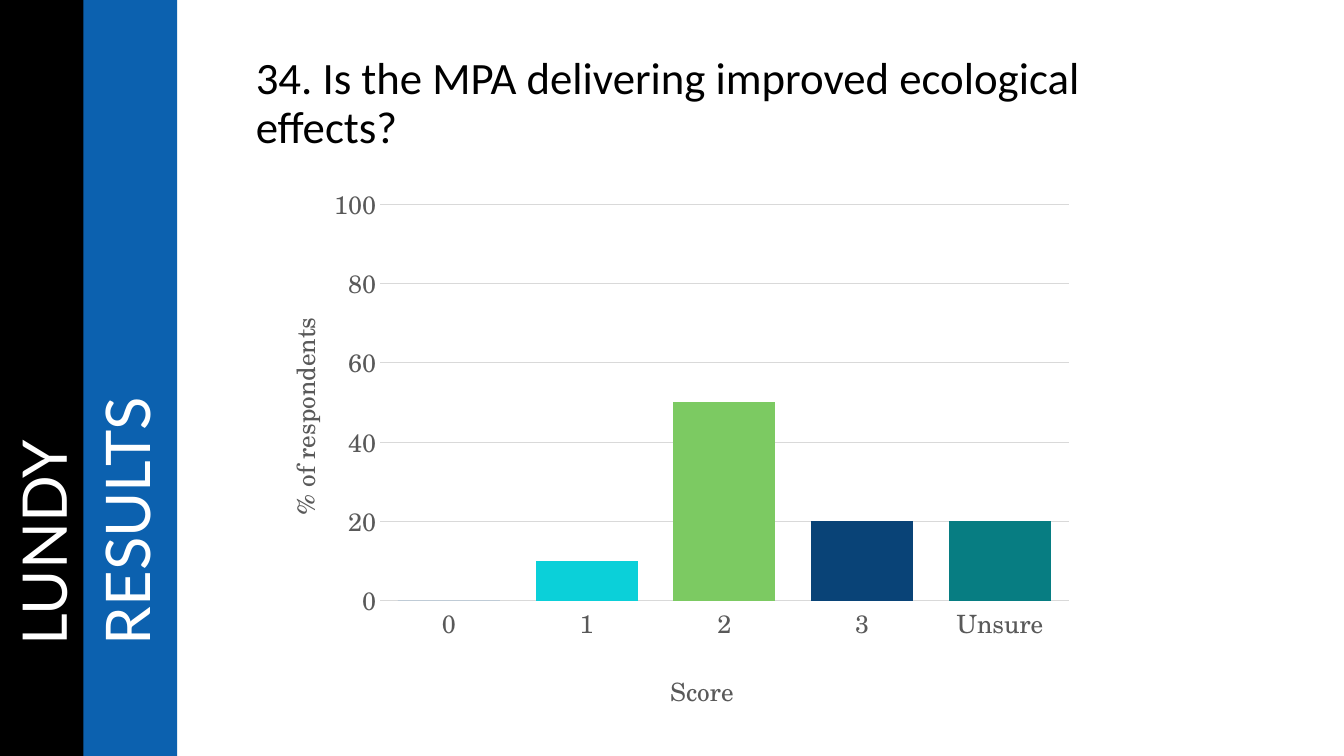
import pptx
import pptx.chart.data
import pptx.dml.color
import pptx.enum.chart
import pptx.enum.shapes
import pptx.enum.text
import pptx.oxml
import pptx.oxml.ns
import pptx.util

Pt = pptx.util.Pt
CHART_FONT = "TeX Gyre Schola"
RESPONSES = {
    "0": (0, "0F6FC6"),
    "1": (10, "0BD0D9"),
    "2": (50, "7CCA62"),
    "3": (20, "094377"),
    "Unsure": (20, "077D82"),
}


def rgb(value):
    """Turn a hex string into a colour."""
    return pptx.dml.color.RGBColor.from_string(value)


def style_font(font, name, size, color):
    """Set the face, size and colour of a font."""
    font.name = name
    font.size = Pt(size)
    font.bold = False
    font.color.rgb = rgb(color)


def write_line(frame, wording, name, size, color):
    """Write one left-aligned, vertically centred paragraph."""
    frame.text = wording
    frame.word_wrap = True
    frame.auto_size = pptx.enum.text.MSO_AUTO_SIZE.NONE
    frame.vertical_anchor = pptx.enum.text.MSO_ANCHOR.MIDDLE
    paragraph = frame.paragraphs[0]
    paragraph.alignment = pptx.enum.text.PP_ALIGN.LEFT
    paragraph.line_spacing = 0.9
    style_font(paragraph.runs[0].font, name, size, color)


def add_question(slide, wording):
    """Place the question in the title placeholder."""
    question = slide.shapes.title
    question.left, question.top = Pt(175.5), Pt(22.5)
    question.width, question.height = Pt(699), Pt(104.5)
    write_line(question.text_frame, wording, "Calibri", 32, "000000")


def add_side_band(slide, wording, edge, color):
    """Add a full-height band at the given left edge, reading upwards."""
    length, thickness = 540, 67
    band = slide.shapes.add_shape(
        pptx.enum.shapes.MSO_SHAPE.RECTANGLE,
        Pt(edge + (thickness - length) / 2), Pt((length - thickness) / 2),
        Pt(length), Pt(thickness))
    band.rotation = 270
    band.shadow.inherit = False
    band.fill.solid()
    band.fill.fore_color.rgb = rgb(color)
    band.line.fill.background()
    band.text_frame.margin_left = Pt(79.2)
    write_line(band.text_frame, wording, "Lato", 44, "FFFFFF")


def set_layout(element, index, **fractions):
    """Fix the place of a chart part as fractions of the chart."""
    for old in element.findall(pptx.oxml.ns.qn("c:layout")):
        element.remove(old)
    target = '<c:layoutTarget val="inner"/>' if "w" in fractions else ""
    modes = "".join(f'<c:{key}Mode val="edge"/>' for key in "xy")
    values = "".join(f'<c:{key} val="{value}"/>' for key, value in fractions.items())
    element.insert(index, pptx.oxml.parse_xml(
        f'<c:layout {pptx.oxml.ns.nsdecls("c")}><c:manualLayout>'
        f"{target}{modes}{values}</c:manualLayout></c:layout>"))


def style_axis(axis, caption, x, y):
    """Format an axis and place its caption."""
    axis.major_tick_mark = pptx.enum.chart.XL_TICK_MARK.NONE
    axis.minor_tick_mark = pptx.enum.chart.XL_TICK_MARK.NONE
    style_font(axis.tick_labels.font, CHART_FONT, 18, "595959")
    frame = axis.axis_title.text_frame
    frame.text = caption
    style_font(frame.paragraphs[0].runs[0].font, CHART_FONT, 18, "595959")
    set_layout(axis.axis_title._element, 1, x=x, y=y)


def style_line(line):
    """Make a thin grey chart line."""
    line.color.rgb = rgb("D9D9D9")
    line.width = Pt(0.75)


def add_score_chart(slide):
    """Add the column chart of respondents by score."""
    scores = pptx.chart.data.CategoryChartData()
    scores.categories = list(RESPONSES)
    scores.add_series("Series 1", [share for share, color in RESPONSES.values()])
    chart = slide.shapes.add_chart(
        pptx.enum.chart.XL_CHART_TYPE.COLUMN_CLUSTERED,
        Pt(175.5), Pt(126.5), Pt(600), Pt(388), scores).chart
    chart.has_title = False
    chart.has_legend = False
    style_font(chart.font, CHART_FONT, 18, "000000")

    style_axis(chart.category_axis, "Score", 0.5, 0.9)
    style_line(chart.category_axis.format.line)

    share_axis = chart.value_axis
    style_axis(share_axis, "% of respondents", 0.04, 0.25)
    share_axis.minimum_scale, share_axis.maximum_scale = 0, 100
    share_axis.major_unit = 20
    share_axis.tick_labels.number_format = "General"
    share_axis.tick_labels.number_format_is_linked = False
    share_axis.format.line.fill.background()
    style_line(share_axis.major_gridlines.format.line)
    direction = share_axis.axis_title._element.find(".//" + pptx.oxml.ns.qn("a:bodyPr"))
    direction.set("rot", "-5400000")
    direction.set("vert", "horz")

    columns = chart.plots[0]
    columns.gap_width = 35
    columns.overlap = -2
    columns.vary_by_categories = False
    for index, (share, color) in enumerate(RESPONSES.values()):
        fill = columns.series[0].points[index].format.fill
        fill.solid()
        fill.fore_color.rgb = rgb(color)
    set_layout(chart._chartSpace.chart.plotArea, 0, x=0.16, y=0.05, w=0.82, h=0.73)


def main():
    """Build and save the slide."""
    presentation = pptx.Presentation()
    presentation.slide_width, presentation.slide_height = Pt(960), Pt(540)
    slide = presentation.slides.add_slide(presentation.slide_layouts[5])
    add_question(slide, "34. Is the MPA delivering improved ecological effects?")
    add_score_chart(slide)
    add_side_band(slide, "LUNDY", 0, "000000")
    add_side_band(slide, "RESULTS", 59.5, "0C61AF")
    presentation.save("out.pptx")


if __name__ == "__main__":
    main()
